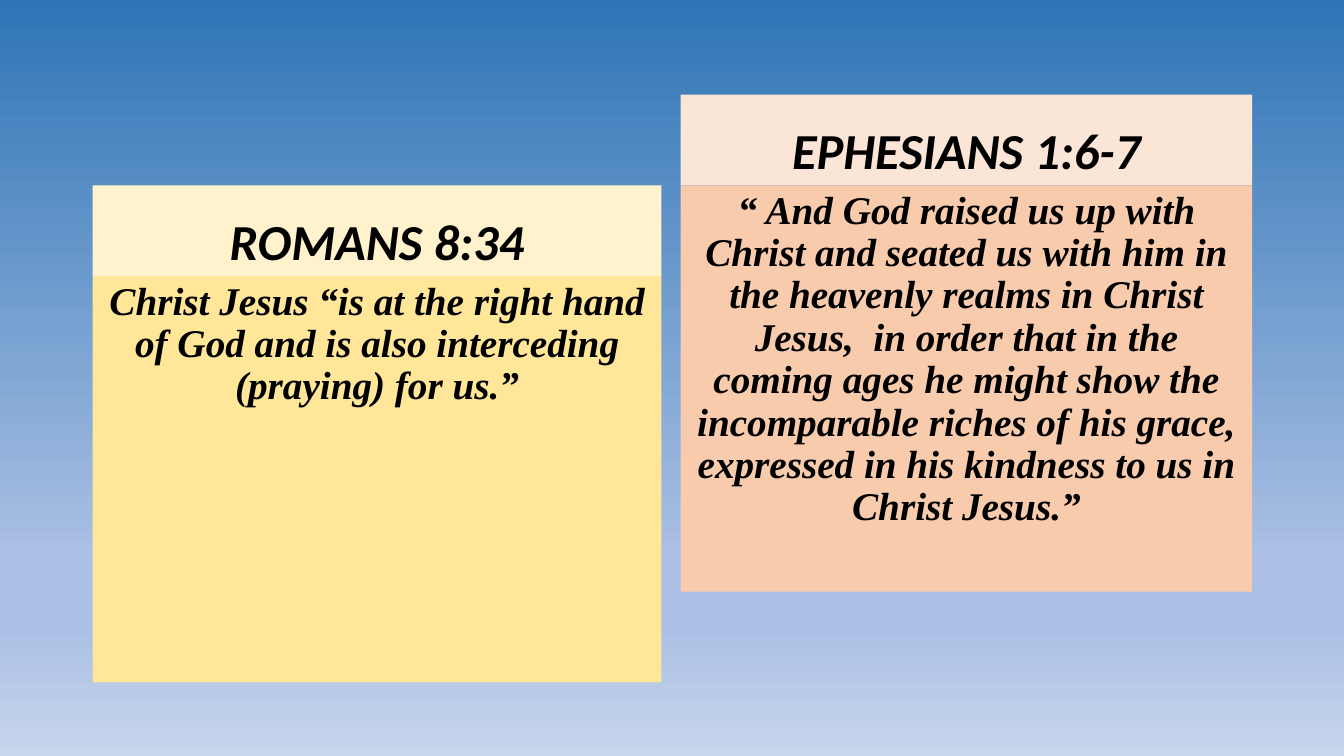
"""Builds a slide with two scripture passages side by side."""
from copy import deepcopy

from pptx import Presentation
from pptx.dml.color import RGBColor
from pptx.enum import shapes, text
from pptx.oxml import ns
from pptx.util import Inches, Pt

BLACK = RGBColor(0x00, 0x00, 0x00)
PALE_YELLOW = RGBColor(0xFF, 0xF2, 0xCC)
YELLOW = RGBColor(0xFF, 0xE6, 0x99)
PALE_ORANGE = RGBColor(0xFB, 0xE5, 0xD6)
ORANGE = RGBColor(0xF8, 0xCB, 0xAD)
DEEP_BLUE = RGBColor(0x2E, 0x75, 0xB6)
SOFT_BLUE = RGBColor(0xAB, 0xC0, 0xE4)
LIGHT_BLUE = RGBColor(0xC7, 0xD5, 0xED)

SKY = [(0, DEEP_BLUE), (0.74, SOFT_BLUE), (0.83, SOFT_BLUE), (1, LIGHT_BLUE)]
HEADING_HEIGHT = 0.9
VERSE_HEIGHT = 4.03
HEADING_FONT = {"name": "Calibri", "size": Pt(36)}
VERSE_FONT = {"name": "Times New Roman", "size": Pt(28)}
PARAGRAPH_FORMAT = {
    "alignment": text.PP_ALIGN.CENTER,
    "line_spacing": 0.9,
    "space_before": Pt(10),
}

ROMANS = (
    "Christ Jesus “is at the right hand of God and is also interceding "
    "(praying) for us.”"
)
EPHESIANS = (
    "“ And God raised us up with Christ and seated us with him in the "
    "heavenly realms in Christ Jesus,  in order that in the coming ages he "
    "might show the incomparable riches of his grace, expressed in his "
    "kindness to us in Christ Jesus.”"
)


def paint_background(slide, stops):
    """Fill the background with a top-to-bottom gradient."""
    fill = slide.background.fill
    fill.gradient()
    fill.gradient_angle = 270
    stop_list = next(slide.element.iter(ns.qn("a:gsLst")))
    while len(stop_list) < len(stops):
        stop_list.append(deepcopy(stop_list[0]))
    for stop, (position, color) in zip(fill.gradient_stops, stops):
        stop.position = position
        stop.color.rgb = color


def add_block(slide, box, color, words, font_format, anchor):
    """Add a filled rectangle with bold italic centred text."""
    shape = slide.shapes.add_shape(
        shapes.MSO_SHAPE.RECTANGLE, *(Inches(length) for length in box)
    )
    shape.shadow.inherit = False
    shape.fill.solid()
    shape.fill.fore_color.rgb = color
    shape.line.fill.background()
    frame = shape.text_frame
    frame.word_wrap = True
    frame.vertical_anchor = anchor
    paragraph = frame.paragraphs[0]
    for name, value in PARAGRAPH_FORMAT.items():
        setattr(paragraph, name, value)
    run = paragraph.add_run()
    run.text = words
    run.font.color.rgb = BLACK
    for name, value in {**font_format, "bold": True, "italic": True}.items():
        setattr(run.font, name, value)


def add_passage(slide, left, top, width, heading, verse, colors):
    """Add a heading block with its verse block directly below."""
    add_block(slide, (left, top, width, HEADING_HEIGHT), colors[0], heading,
              HEADING_FONT, text.MSO_ANCHOR.BOTTOM)
    add_block(slide, (left, top + HEADING_HEIGHT, width, VERSE_HEIGHT),
              colors[1], verse, VERSE_FONT, text.MSO_ANCHOR.TOP)


def main():
    """Build and save the presentation."""
    presentation = Presentation()
    presentation.slide_width = Inches(13.33)
    presentation.slide_height = Inches(7.5)
    slide = presentation.slides.add_slide(presentation.slide_layouts[6])
    paint_background(slide, SKY)
    add_passage(slide, 0.92, 1.84, 5.64, "ROMANS 8:34", ROMANS,
                (PALE_YELLOW, YELLOW))
    add_passage(slide, 6.75, 0.94, 5.67, "EPHESIANS 1:6-7", EPHESIANS,
                (PALE_ORANGE, ORANGE))
    presentation.save("out.pptx")


if __name__ == "__main__":
    main()
